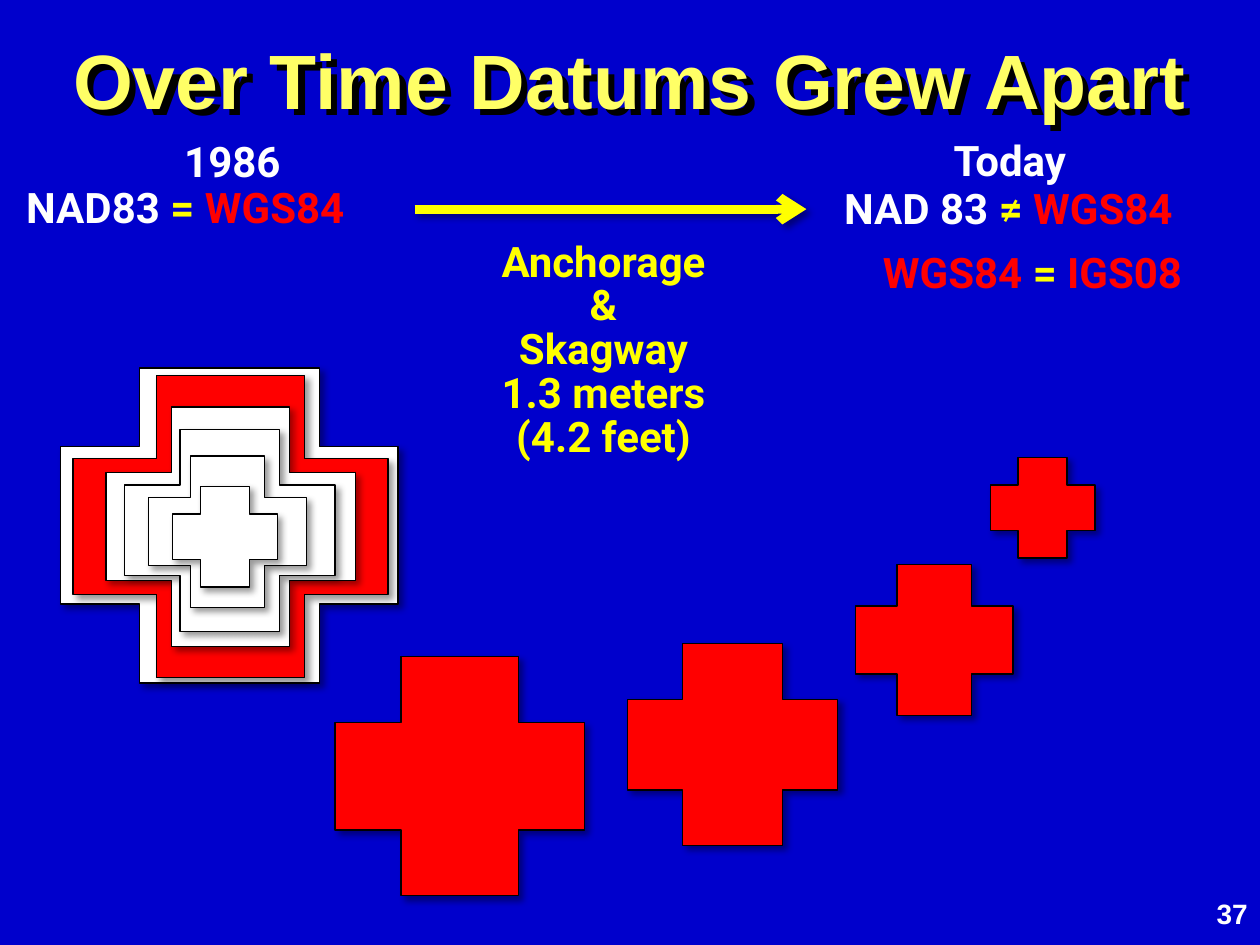
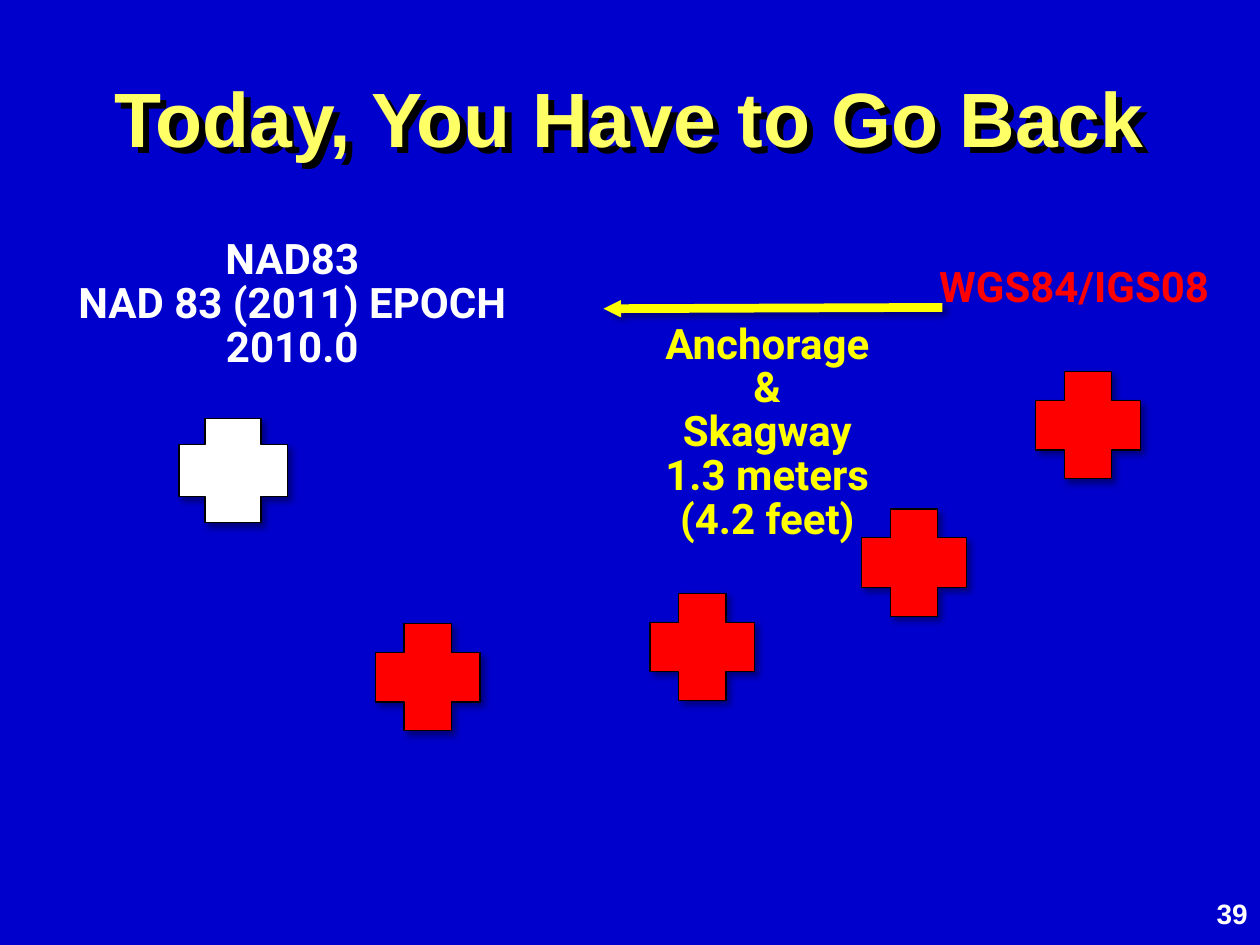
from dataclasses import dataclass

from pptx import Presentation
from pptx.dml.color import RGBColor
from pptx.enum.shapes import MSO_CONNECTOR, MSO_SHAPE
from pptx.enum.text import MSO_ANCHOR, MSO_AUTO_SIZE, PP_ALIGN
from pptx.oxml import parse_xml
from pptx.oxml.ns import nsdecls
from pptx.util import Inches, Pt


@dataclass(frozen=True)
class Theme:
    background: str = "0000CC"
    title: str = "FFFF66"
    white: str = "FFFFFF"
    red: str = "FF0000"
    yellow: str = "FFFF00"
    black: str = "000000"
    heading_font: str = "Arial"
    label_font: str = "Roboto"
    title_size: int = 44
    label_size: int = 24
    number_size: int = 16
    line_spacing: int = 25


THEME = Theme()
PLACE = ["Anchorage", "&", "Skagway", "1.3 meters (4.2 feet)"]


def rgb(color):
    return RGBColor.from_string(color)


def style_font(font, name, size, color):
    font.name = name
    font.size = Pt(size)
    font.bold = True
    font.color.rgb = rgb(color)


def add_shadow(sp, blur=4, dist=3, opacity=40):
    """Cast a black shadow down and to the right; blur and dist are points."""
    sp._element.spPr.append(parse_xml(
        f'<a:effectLst {nsdecls("a")}>'
        f'<a:outerShdw blurRad="{Pt(blur)}" dist="{Pt(dist)}" dir="2700000" '
        f'algn="tl" rotWithShape="0"><a:srgbClr val="{THEME.black}">'
        f'<a:alpha val="{opacity * 1000}"/></a:srgbClr></a:outerShdw></a:effectLst>'))


def add_text_box(slide, box, anchor=MSO_ANCHOR.TOP):
    tf = slide.shapes.add_textbox(*map(Inches, box)).text_frame
    tf.word_wrap = True
    tf.vertical_anchor = anchor
    return tf


def add_label(slide, box, lines, color, spacing=None):
    """Write centred paragraphs in one colour."""
    tf = add_text_box(slide, box)
    for i, line in enumerate(lines):
        p = tf.add_paragraph() if i else tf.paragraphs[0]
        p.text = line
        p.alignment = PP_ALIGN.CENTER
        if spacing:
            p.line_spacing = Pt(spacing)
        style_font(p.font, THEME.label_font, THEME.label_size, color)


def add_relation(slide, box, left, sign, right, left_color, align=PP_ALIGN.LEFT):
    """Write two datum names with a yellow sign between them."""
    p = add_text_box(slide, box).paragraphs[0]
    p.alignment = align
    parts = [(left, left_color), (sign, THEME.yellow), (right, THEME.red)]
    for i, (text, color) in enumerate(parts):
        r = p.add_run()
        r.text = text if i == 2 else f"{text} "
        style_font(r.font, THEME.label_font, THEME.label_size, color)


def add_cross(shapes, box, color, arm=0.275):
    sp = shapes.add_shape(MSO_SHAPE.CROSS, *map(Inches, box))
    sp.adjustments[0] = arm
    sp.fill.solid()
    sp.fill.fore_color.rgb = rgb(color)
    sp.line.color.rgb = rgb(THEME.black)
    sp.line.width = Pt(0.75)
    add_shadow(sp)


def add_arrow(slide, start, end, head):
    """Draw a thick line; head is the XML of its arrowhead."""
    line = slide.shapes.add_connector(
        MSO_CONNECTOR.STRAIGHT, *map(Inches, (*start, *end)))
    line.line.color.rgb = rgb(THEME.yellow)
    line.line.width = Pt(5)
    line.line._get_or_add_ln().append(parse_xml(head))
    add_shadow(line)


def add_slide(prs, title, title_top, number):
    slide = prs.slides.add_slide(prs.slide_layouts.get_by_name("Title Only"))
    sp = slide.shapes.title
    sp.left, sp.top, sp.width, sp.height = map(Inches, (0, title_top, 10, 1.25))
    add_shadow(sp, blur=0, dist=5, opacity=100)
    tf = sp.text_frame
    tf.text = title
    tf.auto_size = MSO_AUTO_SIZE.NONE
    tf.vertical_anchor = MSO_ANCHOR.MIDDLE
    p = tf.paragraphs[0]
    p.alignment = PP_ALIGN.CENTER
    style_font(p.font, THEME.heading_font, THEME.title_size, THEME.title)

    p = add_text_box(slide, (7.92, 7, 2.08, 0.5), MSO_ANCHOR.MIDDLE).paragraphs[0]
    p.text = str(number)
    p.alignment = PP_ALIGN.RIGHT
    style_font(p.font, THEME.heading_font, THEME.number_size, THEME.white)
    return slide


def build_drift_slide(prs):
    slide = add_slide(prs, "Over Time Datums Grew Apart", 0, 37)
    add_label(slide, (0.86, 1.03, 1.97, 0.5), ["1986"], THEME.white)
    add_label(slide, (7.03, 1.02, 1.97, 0.5), ["Today"], THEME.white)
    add_relation(slide, (0.11, 1.39, 3.27, 0.51), "NAD83", "=", "WGS84", THEME.white)
    add_relation(slide, (6.6, 1.4, 3.32, 0.51), "NAD 83", "≠", "WGS84", THEME.white)
    add_relation(slide, (6.71, 1.91, 2.97, 0.5), "WGS84", "=", "IGS08",
                 THEME.red, PP_ALIGN.CENTER)
    add_arrow(slide, (3.29, 1.66), (6.4, 1.66),
              f'<a:tailEnd {nsdecls("a")} type="arrow"/>')
    add_label(slide, (3.76, 1.87, 2.06, 1.85), PLACE, THEME.yellow,
              THEME.line_spacing)

    together = slide.shapes.add_group_shape().shapes
    add_cross(together, (0.48, 2.92, 2.68, 2.5), THEME.white, arm=0.25)
    add_cross(together, (0.58, 2.98, 2.5, 2.4), THEME.red)
    # Each later epoch: cross size, WGS84 corner, NAD 83 corner
    epochs = [
        ((1.98, 1.9), (2.66, 5.21), (0.84, 3.23)),
        ((1.67, 1.6), (4.98, 5.11), (0.99, 3.41)),
        ((1.25, 1.2), (6.79, 4.48), (1.18, 3.62)),
        ((0.83, 0.8), (7.86, 3.63), (1.37, 3.86)),
    ]
    for size, wgs84, nad83 in epochs:
        pair = slide.shapes.add_group_shape().shapes
        add_cross(pair, (*wgs84, *size), THEME.red)
        add_cross(pair, (*nad83, *size), THEME.white)


def build_return_slide(prs):
    slide = add_slide(prs, "Today, You Have to Go Back", 0.3, 39)
    labels = [
        ((0, 1.85, 4.64, 1.15), ["NAD83", "NAD 83 (2011) EPOCH 2010.0"], THEME.white),
        ((7.18, 2.07, 2.69, 0.45), ["WGS84/IGS08"], THEME.red),
        ((5.06, 2.52, 2.06, 1.85), PLACE, THEME.yellow),
    ]
    for box, lines, color in labels:
        add_label(slide, box, lines, color, THEME.line_spacing)
    add_arrow(slide, (4.79, 2.45), (7.48, 2.44),
              f'<a:headEnd {nsdecls("a")} type="triangle" w="sm" len="sm"/>')

    add_cross(slide.shapes, (1.42, 3.32, 0.86, 0.83), THEME.white, arm=0.25)
    for corner in [(8.22, 2.95), (6.84, 4.04), (5.16, 4.71), (2.98, 4.95)]:
        add_cross(slide.shapes, (*corner, 0.83, 0.85), THEME.red)


def main():
    prs = Presentation()
    prs.slide_width, prs.slide_height = Inches(10), Inches(7.5)
    fill = prs.slide_master.background.fill
    fill.solid()
    fill.fore_color.rgb = rgb(THEME.background)
    build_drift_slide(prs)
    build_return_slide(prs)
    prs.save("out.pptx")


if __name__ == "__main__":
    main()
